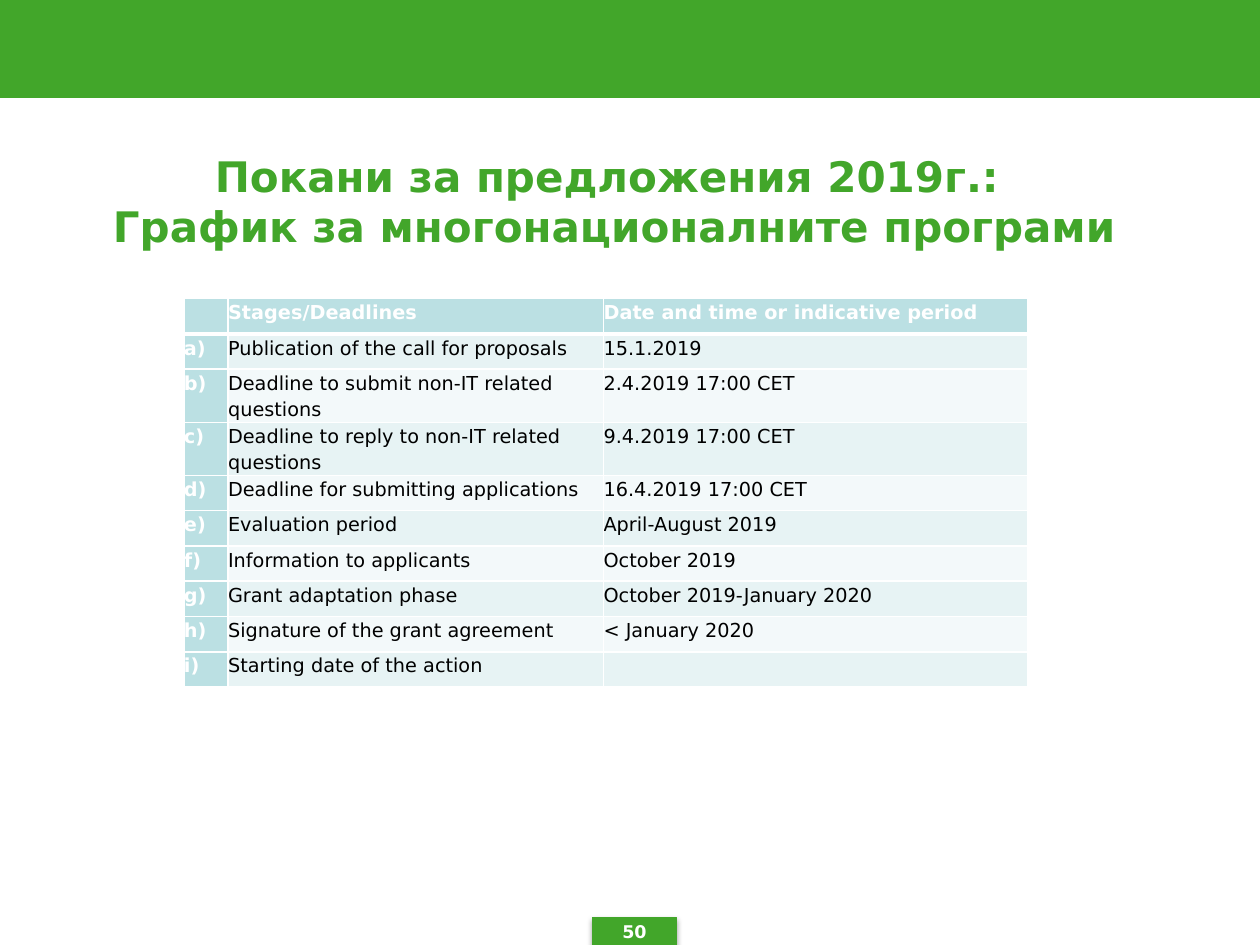
import pptx
import pptx.util
import pptx.dml.color
import pptx.enum.shapes
import pptx.enum.text
import pptx.oxml
import pptx.oxml.ns
from lxml import etree

Inches = pptx.util.Inches
Pt = pptx.util.Pt
qn = pptx.oxml.ns.qn
NS = pptx.oxml.ns.nsdecls("a")
FACE = "DejaVu Sans"
GREEN, WHITE, BLACK = "42A62A", "FFFFFF", "000000"
TEAL, BANDS = "BBE0E3", ("E7F3F4", "F3F9FA")
WIDTHS = (0.35, 2.98, 3.37)
ROWS = (
    ("", "Stages/Deadlines", "Date and time or indicative period"),
    ("a)", "Publication of the call for proposals", "15.1.2019"),
    ("b)", "Deadline to submit non-IT related questions", "2.4.2019 17:00 CET"),
    ("c)", "Deadline to reply to non-IT related questions", "9.4.2019 17:00 CET"),
    ("d)", "Deadline for submitting applications", "16.4.2019 17:00 CET"),
    ("e)", "Evaluation period", "April-August 2019"),
    ("f)", "Information to applicants", "October 2019"),
    ("g)", "Grant adaptation phase", "October 2019-January 2020"),
    ("h)", "Signature of the grant agreement", "< January 2020"),
    ("i)", "Starting date of the action", ""),
)


def color(code):
    return pptx.dml.color.RGBColor.from_string(code)


def style(para, size, code, bold):
    for run in para.runs:
        run.font.name = FACE
        run.font.size = Pt(size)
        run.font.bold = bold
        run.font.color.rgb = color(code)


def add_bar(slide, left, top, width, height):
    bar = slide.shapes.add_shape(
        pptx.enum.shapes.MSO_SHAPE.RECTANGLE,
        Inches(left), Inches(top), Inches(width), Inches(height))
    bar.shadow.inherit = False
    bar.fill.solid()
    bar.fill.fore_color.rgb = color(GREEN)
    bar.line.color.rgb = color(GREEN)
    bar.line.width = Pt(0.75)
    return bar


def add_shade(shape):
    effects = shape._element.spPr.find(qn("a:effectLst"))
    effects.append(pptx.oxml.parse_xml(
        f'<a:outerShdw {NS} blurRad="{Pt(3.1)}" dist="{Pt(1.8)}" dir="5400000" rotWithShape="0">'
        '<a:srgbClr val="000000"><a:alpha val="35000"/></a:srgbClr></a:outerShdw>'))


def set_title(slide, text):
    title = slide.shapes.title
    title.left, title.top = Inches(0.59), Inches(1.15)
    title.width, title.height = Inches(8.57), Inches(1.26)
    frame = title.text_frame
    frame.text = text
    frame.word_wrap = True
    frame.vertical_anchor = pptx.enum.text.MSO_ANCHOR.MIDDLE
    frame.margin_bottom = Inches(0.42)
    para = frame.paragraphs[0]
    para.alignment = pptx.enum.text.PP_ALIGN.CENTER
    style(para, 24, GREEN, True)


def add_number(slide, text):
    box = slide.shapes.add_textbox(
        Inches(4.69), Inches(7.26), Inches(0.69), Inches(0.26))
    frame = box.text_frame
    frame.word_wrap = True
    frame.text = text
    para = frame.paragraphs[0]
    para.alignment = pptx.enum.text.PP_ALIGN.CENTER
    style(para, 10, WHITE, True)


def set_edges(cell, base):
    props = cell._tc.get_or_add_tcPr()
    edges = (("lnL", 1), ("lnR", 1), ("lnT", 1), ("lnB", base))
    for spot, (tag, width) in enumerate(edges):
        props.insert(spot, pptx.oxml.parse_xml(
            f'<a:{tag} {NS} w="{Pt(width)}"><a:solidFill>'
            f'<a:srgbClr val="{WHITE}"/></a:solidFill></a:{tag}>'))


def fill_cell(cell, text, row, col):
    head = row == 0 or col == 0
    cell.margin_left = cell.margin_right = 0
    cell.margin_top = cell.margin_bottom = 0
    cell.fill.solid()
    cell.fill.fore_color.rgb = color(TEAL if head else BANDS[(row - 1) % 2])
    set_edges(cell, 3 if row == 0 else 1)
    cell.text_frame.text = text
    para = cell.text_frame.paragraphs[0]
    para.line_spacing = 1.15
    para.space_after = Pt(10)
    style(para, 11, WHITE if head else BLACK, head)
    if not text:
        etree.SubElement(para._p, qn("a:endParaRPr"), sz="1100")


def add_grid(slide):
    table = slide.shapes.add_table(
        len(ROWS), len(WIDTHS), Inches(1.46), Inches(2.37),
        Inches(sum(WIDTHS)), Inches(0.28 * len(ROWS))).table
    for col, width in enumerate(WIDTHS):
        table.columns[col].width = Inches(width)
    for row, texts in enumerate(ROWS):
        table.rows[row].height = Inches(0.28)
        for col, text in enumerate(texts):
            fill_cell(table.cell(row, col), text, row, col)


def main():
    deck = pptx.Presentation()
    deck.slide_width, deck.slide_height = Inches(10), Inches(7.5)
    slide = deck.slides.add_slide(deck.slide_layouts[5])
    add_bar(slide, 0, 0, 10, 0.77)
    add_shade(add_bar(slide, 4.7, 7.28, 0.67, 0.22))
    set_title(slide, "Покани за предложения 2019г.: \vГрафик за многонационалните програми")
    add_number(slide, "50")
    add_grid(slide)
    deck.save("out.pptx")


if __name__ == "__main__":
    main()
